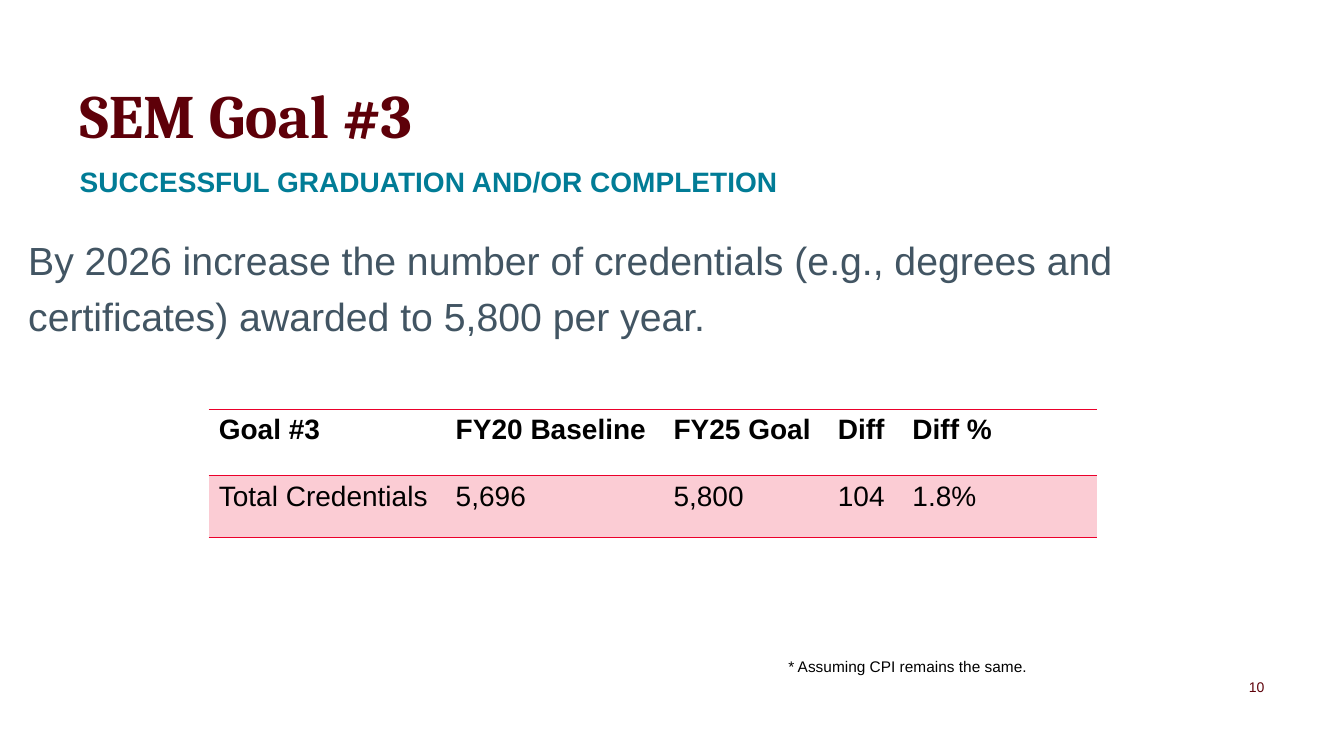
from lxml.etree import SubElement
from pptx import Presentation
from pptx.dml.color import RGBColor
from pptx.enum.text import MSO_ANCHOR, MSO_AUTO_SIZE, PP_ALIGN
from pptx.oxml.ns import qn
from pptx.util import Inches, Pt

COLORS = {
    "maroon": "5E0009",
    "teal": "017C96",
    "slate": "425563",
    "black": "000000",
    "red": "EB002B",
    "pink": "FBCCD4",
}
SLIDE_SIZE = (13.33, 7.5)
MARGIN = 0.79
CONTENT_WIDTH = SLIDE_SIZE[0] - 2 * MARGIN

TITLE = "SEM Goal #3"
SUBTITLE = "SUCCESSFUL GRADUATION AND/OR COMPLETION"
GOAL = ("By 2026 increase the number of credentials (e.g., degrees and "
        "certificates) awarded to 5,800 per year.")
FOOTNOTE = "* Assuming CPI remains the same."
PAGE_NUMBER = "10"
TABLE_ROWS = [
    ("Goal #3", "FY20 Baseline", "FY25 Goal", "Diff", "Diff %"),
    ("Total Credentials", "5,696", "5,800", "104", "1.8%"),
]
TABLE_ORIGIN = (2.07, 4.06)
COLUMN_WIDTHS = (2.35, 2.16, 1.63, 0.74, 1.93)
ROW_HEIGHTS = (0.66, 0.61)


def color(name):
    return RGBColor.from_string(COLORS[name])


def write(frame, text, size, color_name, bold=False, font_name="Arial"):
    paragraph = frame.paragraphs[0]
    paragraph.alignment = PP_ALIGN.LEFT
    run = paragraph.add_run()
    run.text = text
    run.font.name = font_name
    run.font.size = Pt(size)
    run.font.bold = bold
    run.font.color.rgb = color(color_name)
    return paragraph


def set_up_frame(shape, anchor=MSO_ANCHOR.TOP):
    """Wrap the text and drop the insets of a text shape."""
    frame = shape.text_frame
    frame.word_wrap = True
    frame.auto_size = MSO_AUTO_SIZE.NONE
    frame.vertical_anchor = anchor
    frame.margin_left = frame.margin_right = 0
    frame.margin_top = frame.margin_bottom = 0
    return frame


def add_text_box(slide, left, top, width, height):
    return slide.shapes.add_textbox(
        Inches(left), Inches(top), Inches(width), Inches(height))


def add_rules(cell, is_header):
    """Draw red lines above and below a cell and none at its sides."""
    properties = cell._tc.get_or_add_tcPr()
    for side in ("L", "R", "T", "B"):
        line = SubElement(properties, qn(f"a:ln{side}"), w=str(Pt(1)))
        if side in "LR":
            SubElement(line, qn("a:noFill"))
        else:
            fill = SubElement(line, qn("a:solidFill"))
            SubElement(fill, qn("a:srgbClr"), val=COLORS["red"])
    if is_header:
        cell.fill.background()
    else:
        cell.fill.solid()
        cell.fill.fore_color.rgb = color("pink")


def add_goal_table(slide):
    left, top = TABLE_ORIGIN
    table = slide.shapes.add_table(
        len(ROW_HEIGHTS), len(COLUMN_WIDTHS), Inches(left), Inches(top),
        Inches(sum(COLUMN_WIDTHS)), Inches(sum(ROW_HEIGHTS))).table
    table.horz_banding = False
    table.first_row = False
    for column, width in zip(table.columns, COLUMN_WIDTHS):
        column.width = Inches(width)
    for row_index, (row, height) in enumerate(zip(table.rows, ROW_HEIGHTS)):
        row.height = Inches(height)
        is_header = row_index == 0
        for cell, text in zip(row.cells, TABLE_ROWS[row_index]):
            add_rules(cell, is_header)
            write(cell.text_frame, text, 20, "black", bold=is_header)


def main():
    presentation = Presentation()
    presentation.slide_width, presentation.slide_height = map(Inches, SLIDE_SIZE)
    slide = presentation.slides.add_slide(presentation.slide_layouts[5])

    title = slide.shapes.title
    title.left, title.top = Inches(MARGIN), Inches(0.75)
    title.width, title.height = Inches(CONTENT_WIDTH), Inches(0.75)
    write(set_up_frame(title, MSO_ANCHOR.BOTTOM), TITLE, 44, "maroon",
          bold=True, font_name="Cambria")

    subtitle = add_text_box(slide, MARGIN, 1.63, CONTENT_WIDTH, 0.37)
    write(set_up_frame(subtitle), SUBTITLE, 20, "teal", bold=True)

    goal = add_text_box(slide, 0.28, 2.25, 12.77, 4.38)
    write(set_up_frame(goal), GOAL, 28, "slate").line_spacing = 1.2

    add_goal_table(slide)

    footnote = add_text_box(slide, 7.72, 6.47, 3.26, 0.29)
    footnote.text_frame.word_wrap = True
    write(footnote.text_frame, FOOTNOTE, 11, "black")

    page_number = add_text_box(slide, 11.79, 6.63, 0.75, 0.37)
    number = write(set_up_frame(page_number, MSO_ANCHOR.MIDDLE),
                   PAGE_NUMBER, 10, "maroon")
    number.alignment = PP_ALIGN.RIGHT

    presentation.save("out.pptx")


if __name__ == "__main__":
    main()
